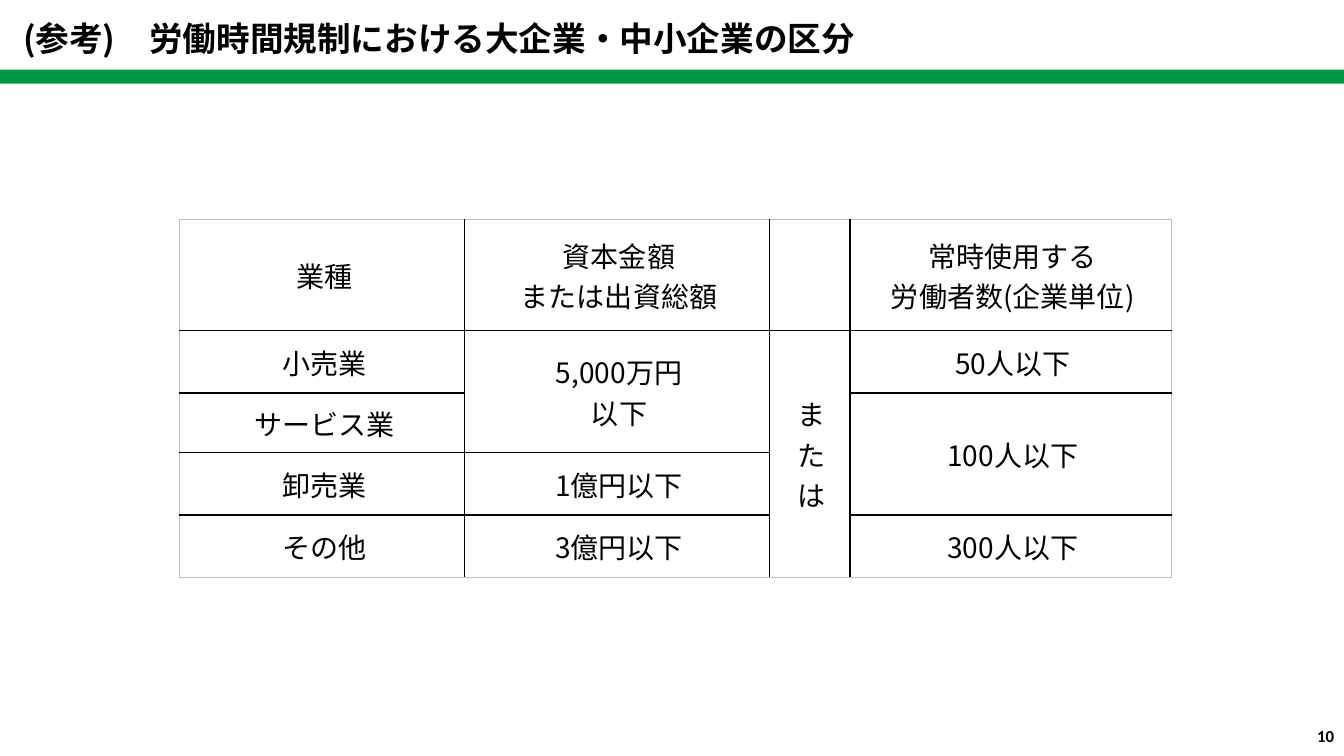
from dataclasses import dataclass

from lxml import etree
from pptx import Presentation
from pptx import util as u
from pptx.dml.color import RGBColor
from pptx.enum import shapes, text
from pptx.oxml.ns import qn

PX = 9144  # EMU per px, 100 px to the inch


@dataclass(frozen=True)
class Theme:
    ink: str = "000000"
    paper: str = "FFFFFF"
    green: str = "009944"
    edge: str = "BFBFBF"
    japanese: str = "Noto Sans CJK JP"
    latin: str = "Calibri"
    title: int = 24
    body: int = 20
    page: int = 12
    rule: int = 1


@dataclass(frozen=True)
class Entry:
    row: int
    col: int
    words: str = ""
    rows: int = 1


THEME = Theme()
COLUMNS = [283, 302, 80, 319]
ROWS = [110, 62, 59, 62, 62]
ENTRIES = [
    Entry(0, 0, "業種"),
    Entry(0, 1, "資本金額\nまたは出資総額"),
    Entry(0, 2),
    Entry(0, 3, "常時使用する\n労働者数(企業単位)"),
    Entry(1, 0, "小売業"),
    Entry(2, 0, "サービス業"),
    Entry(3, 0, "卸売業"),
    Entry(4, 0, "その他"),
    Entry(1, 1, "5,000万円\n以下", rows=2),
    Entry(3, 1, "1億円以下"),
    Entry(4, 1, "3億円以下"),
    Entry(1, 2, "ま\nた\nは", rows=4),
    Entry(1, 3, "50人以下"),
    Entry(2, 3, "100人以下", rows=2),
    Entry(4, 3, "300人以下"),
]


def px(n: int) -> int:
    return u.Emu(n * PX)


def write(tf, words: str, *, size: int, font: str = THEME.japanese,
          bold: bool = False, align=text.PP_ALIGN.LEFT) -> None:
    for i, line in enumerate(words.split("\n")):
        p = tf.add_paragraph() if i else tf.paragraphs[0]
        p.alignment = align
        r = p.add_run()
        r.text = line
        r.font.size = u.Pt(size)
        r.font.bold = bold
        r.font.name = font
        r.font.color.rgb = RGBColor.from_string(THEME.ink)
        etree.SubElement(r.font._element, qn("a:ea"), typeface=font)


def add_text(s, box: tuple[int, int, int, int], words: str, *,
             anchor=text.MSO_ANCHOR.TOP, **style) -> None:
    tf = s.shapes.add_textbox(*map(px, box)).text_frame
    tf.word_wrap = True
    tf.vertical_anchor = anchor
    write(tf, words, **style)


def add_border(cell, side: str, color: str) -> None:
    props = cell._tc.get_or_add_tcPr()
    line = etree.SubElement(props, qn(f"a:ln{side}"), w=str(u.Pt(THEME.rule)))
    fill = etree.SubElement(line, qn("a:solidFill"))
    etree.SubElement(fill, qn("a:srgbClr"), val=color)


def draw_entry(table, entry: Entry) -> None:
    last = entry.row + entry.rows - 1
    outer = {"L": entry.col == 0, "R": entry.col == len(COLUMNS) - 1,
             "T": entry.row == 0, "B": last == len(ROWS) - 1}
    origin = table.cell(entry.row, entry.col)
    if entry.rows > 1:
        origin.merge(table.cell(last, entry.col))

    # Borders go round the whole span, with none inside it
    for row in range(entry.row, last + 1):
        cell = table.cell(row, entry.col)
        first = row == entry.row
        shown = {"L": True, "R": True, "T": first, "B": first or row == last}
        for side, is_outer in outer.items():
            if shown[side]:
                add_border(cell, side, THEME.edge if is_outer else THEME.ink)
        cell.fill.solid()
        cell.fill.fore_color.rgb = RGBColor.from_string(THEME.paper)

    origin.vertical_anchor = text.MSO_ANCHOR.MIDDLE
    origin.margin_left, origin.margin_right = px(8), px(4)
    origin.margin_top = origin.margin_bottom = px(4 if entry.col == 0 else 5)
    if entry.words:
        write(origin.text_frame, entry.words, size=THEME.body,
              align=text.PP_ALIGN.CENTER)


def add_size_table(s, left: int, top: int) -> None:
    frame = s.shapes.add_table(len(ROWS), len(COLUMNS), px(left), px(top),
                               px(sum(COLUMNS)), px(sum(ROWS)))
    table = frame.table
    table.first_row = table.horz_banding = False
    for column, width in zip(table.columns, COLUMNS):
        column.width = px(width)
    for row, height in zip(table.rows, ROWS):
        row.height = px(height)
    for entry in ENTRIES:
        draw_entry(table, entry)


def main() -> None:
    prs = Presentation()
    prs.slide_width, prs.slide_height = px(1333), px(750)
    s = prs.slides.add_slide(prs.slide_layouts[6])

    # Company size table
    add_size_table(s, 178, 218)

    # Title and green band
    band = s.shapes.add_shape(shapes.MSO_SHAPE.RECTANGLE,
                              *map(px, (0, 69, 1333, 14)))
    band.shadow.inherit = False
    band.fill.solid()
    band.fill.fore_color.rgb = RGBColor.from_string(THEME.green)
    band.line.fill.background()
    add_text(s, (13, 13, 1181, 50),
             "(参考)　労働時間規制における大企業・中小企業の区分",
             size=THEME.title, bold=True)

    # Page number
    add_text(s, (1022, 710, 311, 40), "10", size=THEME.page, font=THEME.latin,
             bold=True, align=text.PP_ALIGN.RIGHT,
             anchor=text.MSO_ANCHOR.MIDDLE)

    prs.save("out.pptx")


if __name__ == "__main__":
    main()
